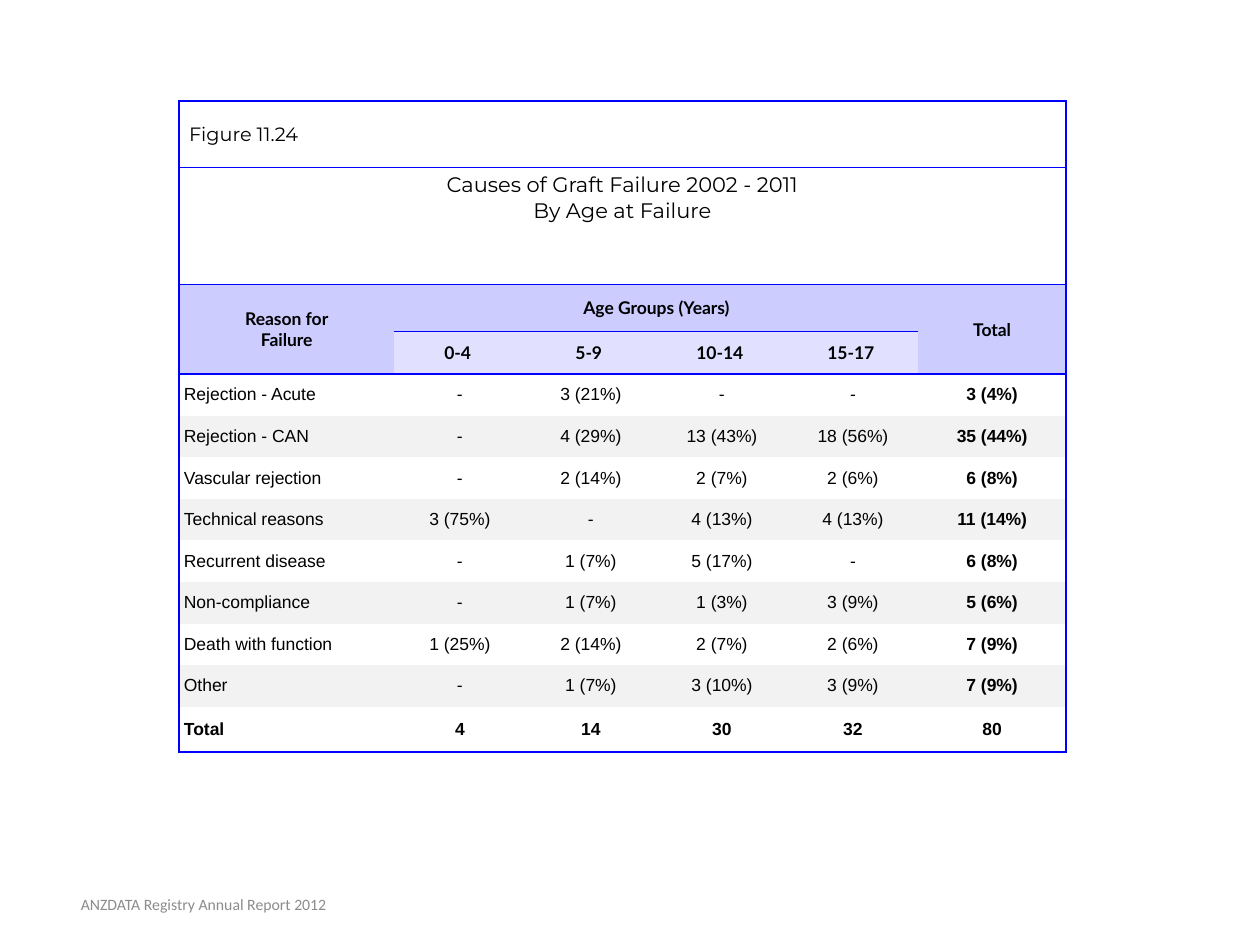
from lxml import etree
from pptx import Presentation
from pptx.dml.color import RGBColor
from pptx.enum.text import MSO_ANCHOR, PP_ALIGN
from pptx.oxml.ns import qn
from pptx.util import Inches, Pt

LEFT, CENTER = PP_ALIGN.LEFT, PP_ALIGN.CENTER
TOP, MIDDLE = MSO_ANCHOR.TOP, MSO_ANCHOR.MIDDLE

COLORS = {"line": "0000FF", "head": "CCCCFF", "age": "E1E1FF",
          "band": "F2F2F2", "text": "000000", "foot": "8C8C8C"}
FONTS = {
    "label": {"name": "Montserrat", "size": Pt(11), "bold": False},
    "title": {"name": "Montserrat", "size": Pt(12), "bold": False},
    "head": {"name": "Lato", "size": Pt(10), "bold": True},
    "body": {"name": "Arial", "size": Pt(10), "bold": False},
    "total": {"name": "Arial", "size": Pt(10), "bold": True},
    "foot": {"name": "Calibri", "size": Pt(9), "bold": False},
}
SIDES = ("left", "right", "top", "bottom")
WIDTHS = [1.71] + [1.04] * 4 + [1.17]
HEIGHTS = [0.53, 0.93, 0.37, 0.34] + [0.33] * 8 + [0.36]
MERGES = [(0, 0, 0, 5), (1, 0, 1, 5), (2, 0, 3, 0), (2, 1, 2, 4), (2, 5, 3, 5)]
RULES = {0, 1, 2, 4, len(HEIGHTS)}
HEAD = [
    ["Figure 11.24"],
    ["Causes of Graft Failure 2002 - 2011\nBy Age at Failure"],
    ["Reason for\nFailure", "Age Groups (Years)", "", "", "", "Total"],
    ["", "0-4 ", "5-9 ", "10-14 ", "15-17 "],
]
BODY = [
    ["Rejection - Acute", "-", "3 (21%)", "-", "-", "3 (4%)"],
    ["Rejection - CAN", "-", "4 (29%)", "13 (43%)", "18 (56%)", "35 (44%)"],
    ["Vascular rejection", "-", "2 (14%)", "2 (7%)", "2 (6%)", "6 (8%)"],
    ["Technical reasons", "3 (75%)", "-", "4 (13%)", "4 (13%)", "11 (14%)"],
    ["Recurrent disease", "-", "1 (7%)", "5 (17%)", "-", "6 (8%)"],
    ["Non-compliance", "-", "1 (7%)", "1 (3%)", "3 (9%)", "5 (6%)"],
    ["Death with function", "1 (25%)", "2 (14%)", "2 (7%)", "2 (6%)", "7 (9%)"],
    ["Other", "-", "1 (7%)", "3 (10%)", "3 (9%)", "7 (9%)"],
    ["Total", "4", "14", "30", "32", "80"],
]


def apply(item, values):
    """Set each named attribute of an item."""
    for name, value in values.items():
        setattr(item, name, value)


def write(frame, text, font, align, color="text", after=None):
    """Fill a text frame with styled paragraphs."""
    frame.text = text
    for para in frame.paragraphs:
        apply(para, {"alignment": align, "space_after": after})
        for run in para.runs:
            apply(run.font, FONTS[font])
            run.font.color.rgb = RGBColor.from_string(COLORS[color])


def border(cell, row, col):
    """Rule the cell edges that lie on the frame or a row line."""
    def ruled(line):
        return line in RULES or (line == 3 and 1 <= col <= 4)

    end = row + (cell.span_height if cell.is_merge_origin else 1)
    wide = cell.span_width if cell.is_merge_origin else 1
    edges = {"L": col == 0, "R": col + wide == len(WIDTHS),
             "T": ruled(row), "B": ruled(end)}
    props = cell._tc.get_or_add_tcPr()
    for side, shown in edges.items():
        line = etree.SubElement(props, qn(f"a:ln{side}"), w=str(Pt(1)))
        fill = etree.SubElement(line, qn("a:solidFill" if shown else "a:noFill"))
        if shown:
            etree.SubElement(fill, qn("a:srgbClr"), val=COLORS["line"])


def shade(cell, row, col):
    """Fill header and banded cells."""
    name = None
    if row == 3 and 1 <= col <= 4:
        name = "age"
    elif row in (2, 3):
        name = "head"
    elif row > 3 and row % 2:
        name = "band"
    if name:
        cell.fill.solid()
        cell.fill.fore_color.rgb = RGBColor.from_string(COLORS[name])
    else:
        cell.fill.background()


def look(row, col):
    """Choose font, alignment and space after for a cell."""
    if row < 4:
        font = ("label", "title", "head", "head")[row]
        return font, CENTER if row else LEFT, None
    bold = col == len(WIDTHS) - 1 or row == len(HEIGHTS) - 1
    return "total" if bold else "body", CENTER if col else LEFT, Pt(14)


def causes(slide, box):
    """Build the table of graft failure causes."""
    table = slide.shapes.add_table(len(HEIGHTS), len(WIDTHS), *box).table
    apply(table, {"first_row": False, "horz_banding": False})
    for col, width in zip(table.columns, WIDTHS):
        col.width = Inches(width)
    for row, height in zip(table.rows, HEIGHTS):
        row.height = Inches(height)
    for top, left, bottom, right in MERGES:
        table.cell(top, left).merge(table.cell(bottom, right))
    texts = HEAD + BODY
    for row in range(len(HEIGHTS)):
        for col in range(len(WIDTHS)):
            cell = table.cell(row, col)
            pad = Inches(0.04 if row else 0.08)
            apply(cell, {f"margin_{side}": pad for side in SIDES})
            cell.vertical_anchor = TOP if row == 1 else MIDDLE
            border(cell, row, col)
            shade(cell, row, col)
            if not cell.is_spanned:
                font, align, after = look(row, col)
                write(cell.text_frame, texts[row][col], font, align, after=after)


def footer(slide, box):
    """Place the report name at the foot."""
    frame = slide.shapes.add_textbox(*box).text_frame
    apply(frame, {"word_wrap": True, "vertical_anchor": MIDDLE})
    write(frame, "ANZDATA Registry Annual Report 2012", "foot", CENTER, "foot")


def main():
    """Build and save the slide."""
    deck = Presentation()
    apply(deck, {"slide_width": Inches(10), "slide_height": Inches(7.5)})
    slide = deck.slides.add_slide(deck.slide_layouts[6])
    causes(slide, [Inches(n) for n in (1.42, 0.8, sum(WIDTHS), sum(HEIGHTS))])
    footer(slide, [Inches(n) for n in (0.03, 6.98, 3.17, 0.4)])
    deck.save("out.pptx")


if __name__ == "__main__":
    main()
